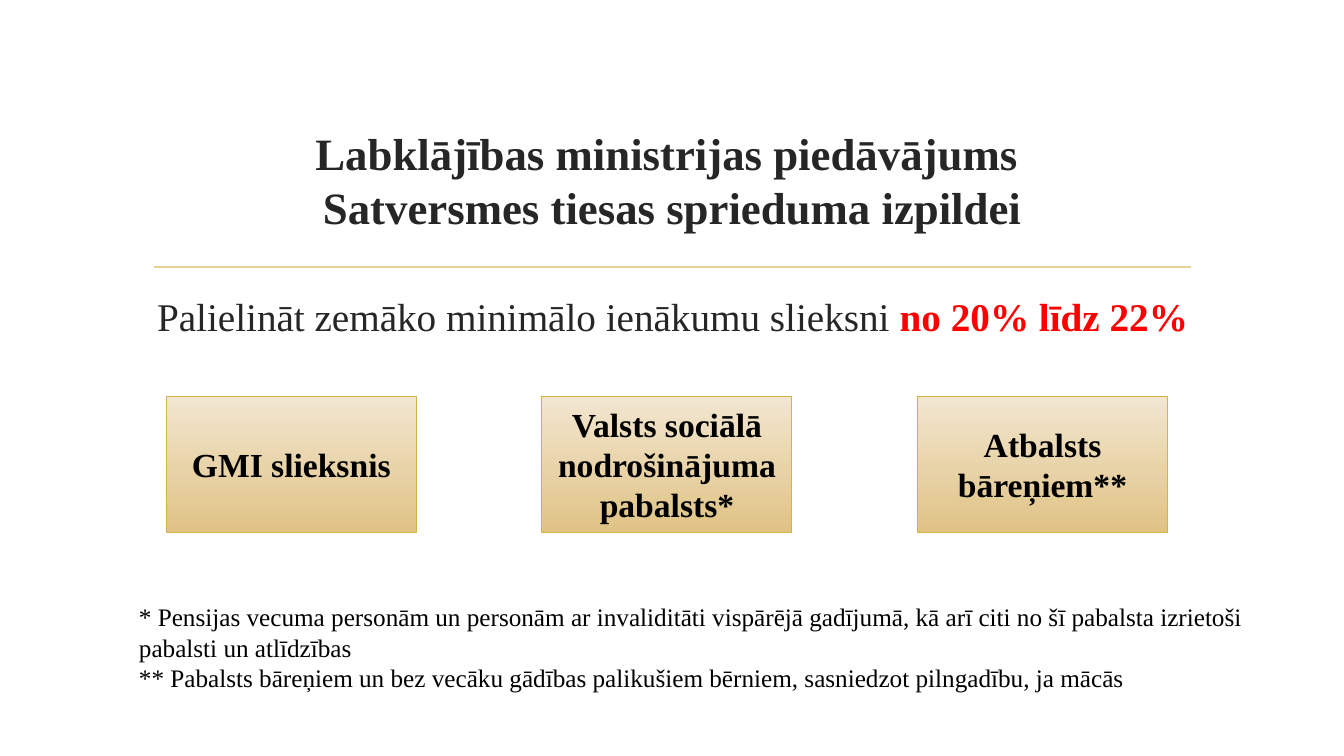
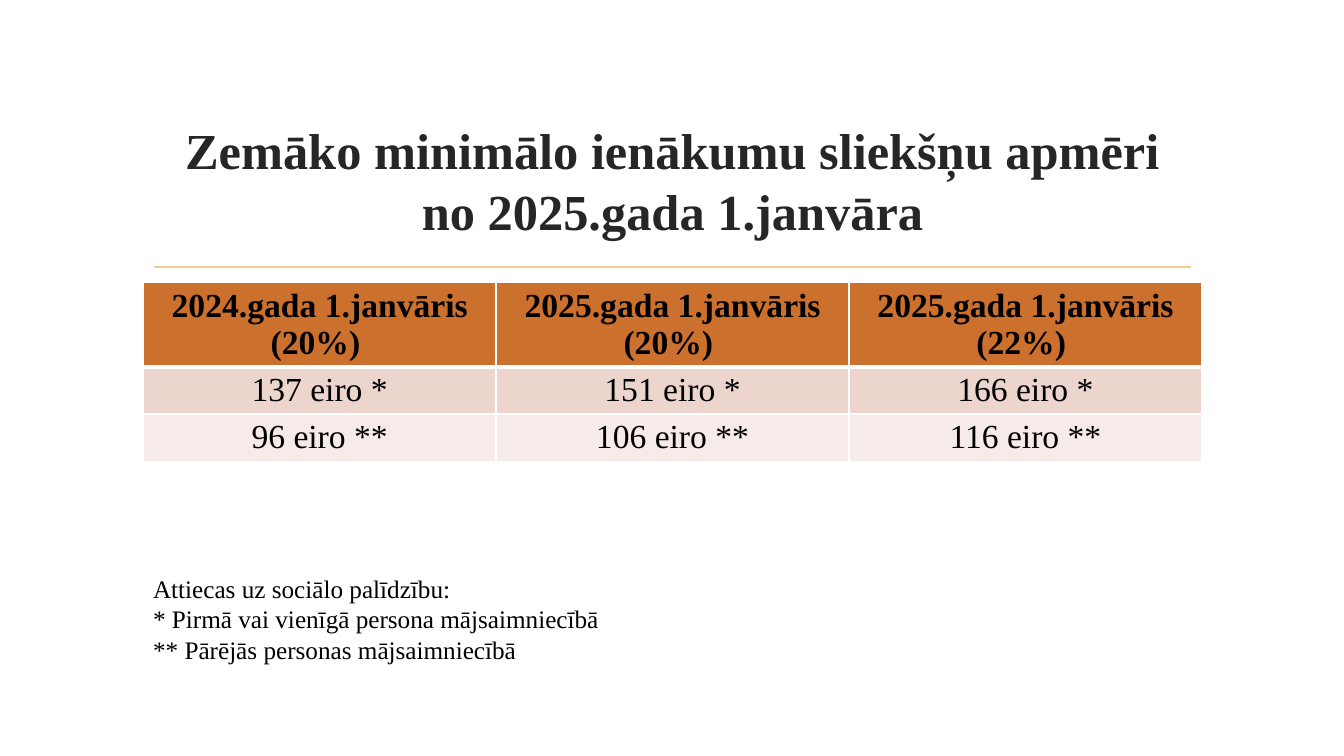
from lxml import etree
from pptx import Presentation
from pptx.dml.color import RGBColor
from pptx.enum.shapes import MSO_CONNECTOR, MSO_SHAPE
from pptx.enum.text import MSO_ANCHOR, PP_ALIGN
from pptx.oxml.ns import qn
from pptx.util import Inches, Pt

CENTER, LEFT = PP_ALIGN.CENTER, PP_ALIGN.LEFT
TOP, MIDDLE = MSO_ANCHOR.TOP, MSO_ANCHOR.MIDDLE
RECTANGLE, STRAIGHT = MSO_SHAPE.RECTANGLE, MSO_CONNECTOR.STRAIGHT

FONT = "Times New Roman"
BLACK = RGBColor(0x00, 0x00, 0x00)
INK = RGBColor(0x26, 0x26, 0x26)
RED = RGBColor(0xFF, 0x00, 0x00)
RULE = RGBColor(0xE8, 0xD1, 0x91)
BOX_LINE = RGBColor(0xD9, 0xB2, 0x47)
BOX_GRADIENT = RGBColor(0xF2, 0xE6, 0xD1), RGBColor(0xE0, 0xC3, 0x85)
ROW_FILLS = (RGBColor(0xCC, 0x70, 0x2D), RGBColor(0xEC, 0xD5, 0xCD),
             RGBColor(0xF6, 0xEB, 0xE8))
BORDER = "FFFFFF"

TITLE_BOX = 1.42, 1.07, 10.5, 1.43
RULE_X, RULE_Y = (1.53, 11.81), 2.65


def set_font(font, size, color, bold=False):
    values = {"name": FONT, "size": Pt(size), "bold": bold}
    for name, value in values.items():
        setattr(font, name, value)
    font.color.rgb = color


def write(tf, paragraphs, align=LEFT, anchor=TOP):
    """Fill a frame; each paragraph is a list of (text, size, color, bold)."""
    tf.word_wrap = True
    tf.vertical_anchor = anchor
    for i, runs in enumerate(paragraphs):
        p = tf.paragraphs[0] if i == 0 else tf.add_paragraph()
        p.alignment = align
        for text, *style in runs:
            for j, line in enumerate(text.split("\n")):
                if j:
                    p.add_line_break()
                r = p.add_run()
                r.text = line
                set_font(r.font, *style)


def add_text(s, box, paragraphs, align=LEFT):
    tb = s.shapes.add_textbox(*map(Inches, box))
    write(tb.text_frame, paragraphs, align)


def add_titled_slide(prs, title, size):
    s = prs.slides.add_slide(prs.slide_layouts[5])
    sp = s.shapes.title
    sp.left, sp.top, sp.width, sp.height = map(Inches, TITLE_BOX)
    write(sp.text_frame, [[(title, size, INK, True)]], CENTER, MIDDLE)

    left, right = map(Inches, RULE_X)
    y = Inches(RULE_Y)
    rule = s.shapes.add_connector(STRAIGHT, left, y, right, y)
    rule.line.color.rgb = RULE
    rule.line.width = Pt(1.25)
    etree.SubElement(rule._element.spPr, qn("a:effectLst"))
    return s


def add_footnotes(s, box, lines):
    add_text(s, box, [[(line, 18, BLACK)] for line in lines])


def add_benefit_boxes(s, box, labels, box_width):
    """Spread equal boxes from the left to the right edge of the given box."""
    left, top, width, height = box
    step = (width - box_width) / (len(labels) - 1)
    for i, label in enumerate(labels):
        sp = s.shapes.add_shape(RECTANGLE, Inches(left + i * step), Inches(top),
                                Inches(box_width), Inches(height))
        sp.shadow.inherit = False
        sp.fill.gradient()
        sp.fill.gradient_angle = 270
        for stop, color in zip(sp.fill.gradient_stops, BOX_GRADIENT):
            stop.color.rgb = color
        sp.line.color.rgb = BOX_LINE
        sp.line.width = Pt(0.75)
        write(sp.text_frame, [[(label, 24, BLACK, True)]], CENTER, MIDDLE)


def set_borders(cell, widths):
    tc_pr = cell._tc.get_or_add_tcPr()
    for side, width in widths.items():
        ln = etree.SubElement(tc_pr, qn(f"a:ln{side}"), w=str(Pt(width)))
        fill = etree.SubElement(ln, qn("a:solidFill"))
        etree.SubElement(fill, qn("a:srgbClr"), val=BORDER)


def add_threshold_table(s, box, rows, row_heights):
    table = s.shapes.add_table(len(rows), len(rows[0]), *map(Inches, box)).table
    for i, (values, height) in enumerate(zip(rows, row_heights)):
        table.rows[i].height = Inches(height)
        for j, value in enumerate(values):
            cell = table.cell(i, j)
            set_borders(cell, {"L": 1, "R": 1, "T": 3 if i == 1 else 1,
                               "B": 3 if i == 0 else 1})
            cell.fill.solid()
            cell.fill.fore_color.rgb = ROW_FILLS[i]
            write(cell.text_frame, [[(value, 24, BLACK, i == 0)]], CENTER)


def build_proposal(prs):
    s = add_titled_slide(prs, "Labklājības ministrijas piedāvājums \n"
                         "Satversmes tiesas sprieduma izpildei", 32)
    add_text(s, (1.42, 2.85, 10.5, 0.6), [[
        ("Palielināt zemāko minimālo ienākumu slieksni ", 28, INK),
        ("no 20% līdz 22% ", 28, RED, True)]], CENTER)
    add_benefit_boxes(s, (1.65, 3.93, 9.93, 1.35), [
        "GMI slieksnis",
        "Valsts sociālā nodrošinājuma pabalsts*",
        "Atbalsts bāreņiem**"], 2.48)
    add_footnotes(s, (1.28, 5.92, 11.3, 1.01), [
        "* Pensijas vecuma personām un personām ar invaliditāti vispārējā "
        "gadījumā, kā arī citi no šī pabalsta izrietoši pabalsti un atlīdzības",
        "** Pabalsts bāreņiem un bez vecāku gādības palikušiem bērniem, "
        "sasniedzot pilngadību, ja mācās"])


def build_thresholds(prs):
    s = add_titled_slide(prs, "Zemāko minimālo ienākumu sliekšņu apmēri "
                         "no 2025.gada 1.janvāra", 36)
    add_threshold_table(s, (1.42, 2.8, 10.5, 1.75), [
        ("2024.gada 1.janvāris (20%) ", "2025.gada 1.janvāris (20%) ",
         "2025.gada 1.janvāris (22%) "),
        ("137 eiro *", "151 eiro *", "166 eiro *"),
        ("96 eiro **", "106 eiro **", "116 eiro **")], (0.82, 0.46, 0.46))
    add_footnotes(s, (1.42, 5.64, 11.3, 1.01), [
        "Attiecas uz sociālo palīdzību:",
        "* Pirmā vai vienīgā persona mājsaimniecībā",
        "** Pārējās personas mājsaimniecībā"])


def main():
    prs = Presentation()
    prs.slide_width, prs.slide_height = Inches(13.33), Inches(7.5)
    build_proposal(prs)
    build_thresholds(prs)
    prs.save("out.pptx")


if __name__ == "__main__":
    main()
